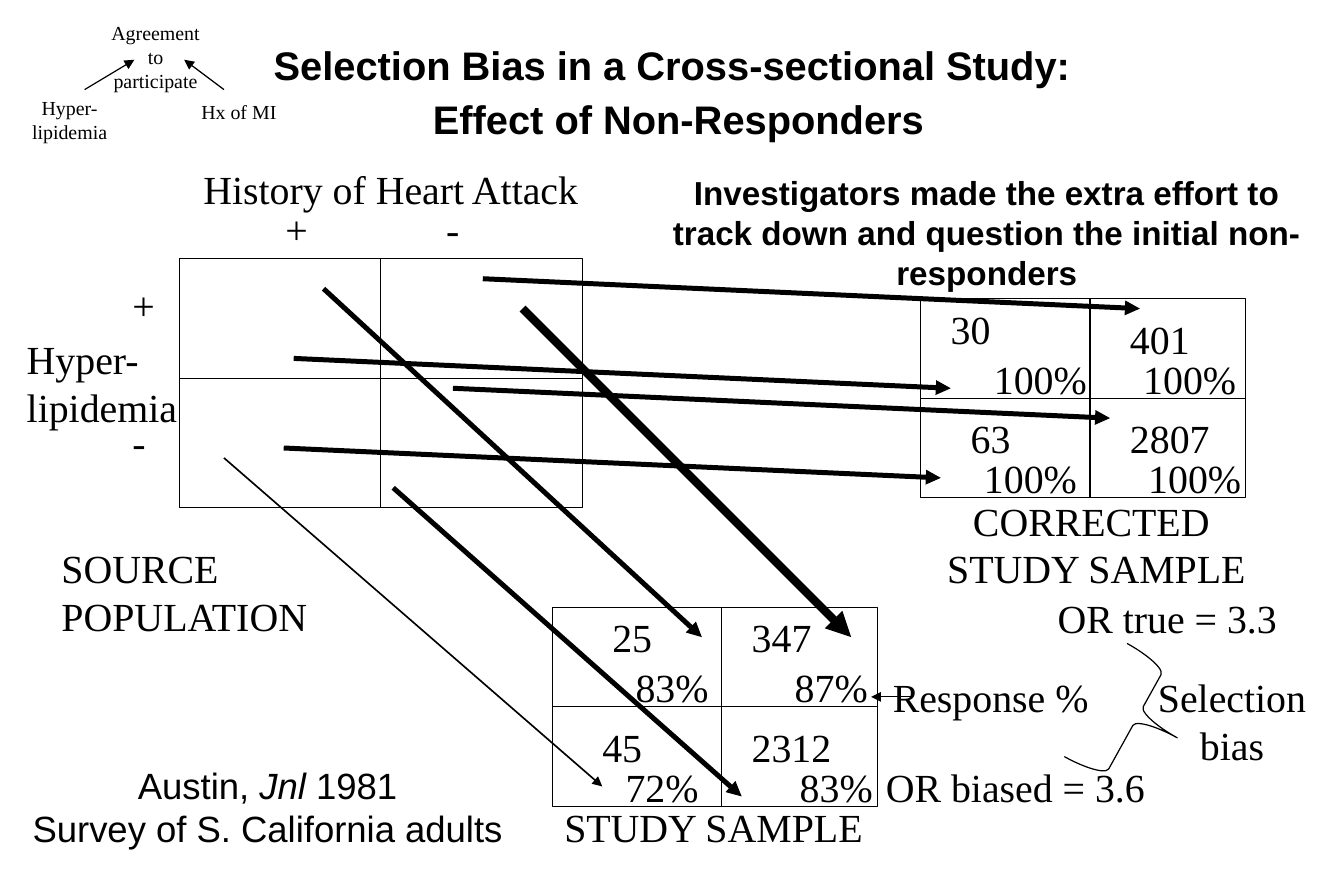
from dataclasses import dataclass

from pptx import Presentation
from pptx.dml.color import RGBColor
from pptx.enum.shapes import MSO_CONNECTOR, MSO_SHAPE
from pptx.enum.text import MSO_ANCHOR, PP_ALIGN
from pptx.oxml.ns import qn
from pptx.util import Emu, Pt
from lxml.etree import SubElement

PX = 9525  # EMU per px, 96 px to the inch


@dataclass(frozen=True)
class Theme:
    ink: RGBColor = RGBColor(0, 0, 0)
    serif: str = "Times New Roman"
    sans: str = "Arial"
    body: int = 24
    gap: int = 28
    source: int = 22
    effort: int = 20
    small: int = 12
    hair: float = 0.75
    thin: float = 1
    medium: float = 3
    thick: float = 5


THEME = Theme()


@dataclass(frozen=True)
class Run:
    text: str
    size: int = THEME.body
    italic: bool = False


@dataclass(frozen=True)
class Label:
    x: int
    y: int
    w: int
    text: str
    h: int = 48
    size: int = THEME.body
    align: PP_ALIGN = PP_ALIGN.CENTER


@dataclass(frozen=True)
class Grid:
    x: int
    y: int
    w: int
    h: int
    mid_x: int
    mid_y: int


@dataclass(frozen=True)
class Arrow:
    x1: int
    y1: int
    x2: int
    y2: int
    width: float = THEME.medium


LEFT = PP_ALIGN.LEFT

GRIDS = [
    Grid(144, 208, 324, 200, 306, 304),  # source population
    Grid(444, 488, 261, 160, 580, 568),  # study sample
    Grid(740, 240, 261, 160, 876, 320),  # corrected study sample
]

HEADINGS = [
    Label(154, 128, 340, "History of Heart Attack", align=LEFT),
    Label(220, 160, 40, "+", align=LEFT),
    Label(349, 160, 40, "-", align=LEFT),
    Label(97, 221, 42, "+", align=LEFT),
    Label(97, 331, 42, "-", align=LEFT),
    Label(12, 264, 172, "Hyper-lipidemia", h=86, align=LEFT),
    Label(40, 432, 240, "SOURCE POPULATION", h=86, align=LEFT),
    Label(444, 640, 280, "STUDY SAMPLE", align=LEFT),
    Label(741, 394, 280, "CORRECTED \nSTUDY SAMPLE", h=86),
]

SAMPLE_CELLS = [
    Label(468, 488, 80, "25"), Label(500, 528, 80, "83%"),
    Label(588, 488, 80, "347"), Label(620, 528, 96, "87%"),
    Label(460, 576, 80, "45"), Label(484, 608, 96, "72%"),
    Label(580, 576, 112, "2312"), Label(628, 608, 88, "83%"),
]

CORRECTED_CELLS = [
    Label(740, 240, 80, "30"), Label(788, 280, 96, "100%"),
    Label(892, 248, 80, "401"), Label(908, 280, 96, "100%"),
    Label(756, 328, 80, "63"), Label(780, 360, 96, "100%"),
    Label(884, 328, 112, "2807"), Label(908, 360, 104, "100%"),
]

RESULTS = [
    Label(692, 608, 248, "OR biased = 3.6"),
    Label(820, 472, 236, "OR true = 3.3"),
    Label(708, 536, 200, "Response %", align=LEFT),
    Label(900, 536, 180, "Selection bias", h=86),
]

CAUSES = [
    Label(12, 72, 88, "Hyper-lipidemia", size=THEME.small),
    Label(148, 75, 88, "Hx of MI", h=30, size=THEME.small),
    Label(76, 12, 98, "Agreement to participate", h=68, size=THEME.small),
]

RESPONSE_ARROWS = [
    Arrow(420, 248, 684, 512, THEME.thick),
    Arrow(260, 232, 564, 512),
    Arrow(316, 392, 596, 640),
    Arrow(180, 368, 484, 632, THEME.thin),
]
EFFORT_STARTS = [(236, 288), (388, 224), (228, 360), (364, 312)]
EFFORT_ARROWS = [Arrow(x, y, x + 528, y + 24) for x, y in EFFORT_STARTS]
NOTE_ARROWS = [
    Arrow(732, 560, 700, 560, THEME.hair),
    Arrow(68, 72, 108, 48, THEME.hair),
    Arrow(180, 72, 148, 48, THEME.hair),
]


def px(n: int) -> Emu:
    return Emu(n * PX)


def add_text(s, box: tuple[int, int, int, int], paragraphs: list[list[Run]],
             font: str = THEME.serif, bold: bool = False,
             align: PP_ALIGN = PP_ALIGN.CENTER,
             anchor: MSO_ANCHOR = MSO_ANCHOR.TOP) -> None:
    tf = s.shapes.add_textbox(*map(px, box)).text_frame
    tf.word_wrap = True
    tf.vertical_anchor = anchor
    for i, runs in enumerate(paragraphs):
        p = tf.add_paragraph() if i else tf.paragraphs[0]
        p.alignment = align
        for run in runs:
            r = p.add_run()
            r.text = run.text
            r.font.name = font
            r.font.size = Pt(run.size)
            r.font.bold = bold
            r.font.italic = run.italic
            r.font.color.rgb = THEME.ink


def add_label(s, label: Label) -> None:
    lines = [[Run(line, label.size)] for line in label.text.split("\n")]
    add_text(s, (label.x, label.y, label.w, label.h), lines, align=label.align)


def add_line(s, line: Arrow, head: bool = True) -> None:
    ends = map(px, (line.x1, line.y1, line.x2, line.y2))
    sp = s.shapes.add_connector(MSO_CONNECTOR.STRAIGHT, *ends)
    sp.line.color.rgb = THEME.ink
    sp.line.width = Pt(line.width)
    if head:
        SubElement(sp.line._get_or_add_ln(), qn("a:tailEnd"), type="triangle")
    SubElement(sp._element.spPr, qn("a:effectLst"))


def add_outline(s, kind: MSO_SHAPE, x: int, y: int, w: int, h: int):
    sp = s.shapes.add_shape(kind, *map(px, (x, y, w, h)))
    sp.shadow.inherit = False
    sp.fill.background()
    sp.line.color.rgb = THEME.ink
    sp.line.width = Pt(THEME.hair)
    return sp


def add_grid(s, g: Grid) -> None:
    add_outline(s, MSO_SHAPE.RECTANGLE, g.x, g.y, g.w, g.h)
    add_line(s, Arrow(g.mid_x, g.y, g.mid_x, g.y + g.h, THEME.hair), head=False)
    add_line(s, Arrow(g.x, g.mid_y, g.x + g.w, g.mid_y, THEME.hair), head=False)


def main() -> None:
    prs = Presentation()
    prs.slide_width, prs.slide_height = px(1080), px(720)
    s = prs.slides.add_slide(prs.slide_layouts[6])

    # Two-by-two tables with their labels and counts
    for grid in GRIDS:
        add_grid(s, grid)
    for label in HEADINGS + SAMPLE_CELLS + CORRECTED_CELLS + RESULTS + CAUSES:
        add_label(s, label)

    # Title, effort note and citation
    add_text(s, (0, 46, 1080, 56),
             [[Run("Selection Bias in a Cross-sectional Study:")],
              [Run(" ", THEME.gap), Run("Effect of Non-Responders")]],
             THEME.sans, bold=True, anchor=MSO_ANCHOR.MIDDLE)
    add_text(s, (524, 134, 538, 106),
             [[Run("Investigators made the extra effort to track down and "
                   "question the initial non-responders", THEME.effort)]],
             THEME.sans, bold=True)
    add_text(s, (0, 608, 430, 80),
             [[Run("Austin, ", THEME.source), Run("Jnl", THEME.source, True),
               Run(" 1981", THEME.source)],
              [Run("Survey of S. California adults", THEME.source)]],
             THEME.sans)

    # Arrows and the selection bias brace
    for arrow in RESPONSE_ARROWS + EFFORT_ARROWS + NOTE_ARROWS:
        add_line(s, arrow)
    brace = add_outline(s, MSO_SHAPE.RIGHT_BRACE, 876, 528, 72, 104)
    brace.adjustments[0], brace.adjustments[1] = 0.12, 0.45
    brace.rotation = 29

    prs.save("out.pptx")


if __name__ == "__main__":
    main()
